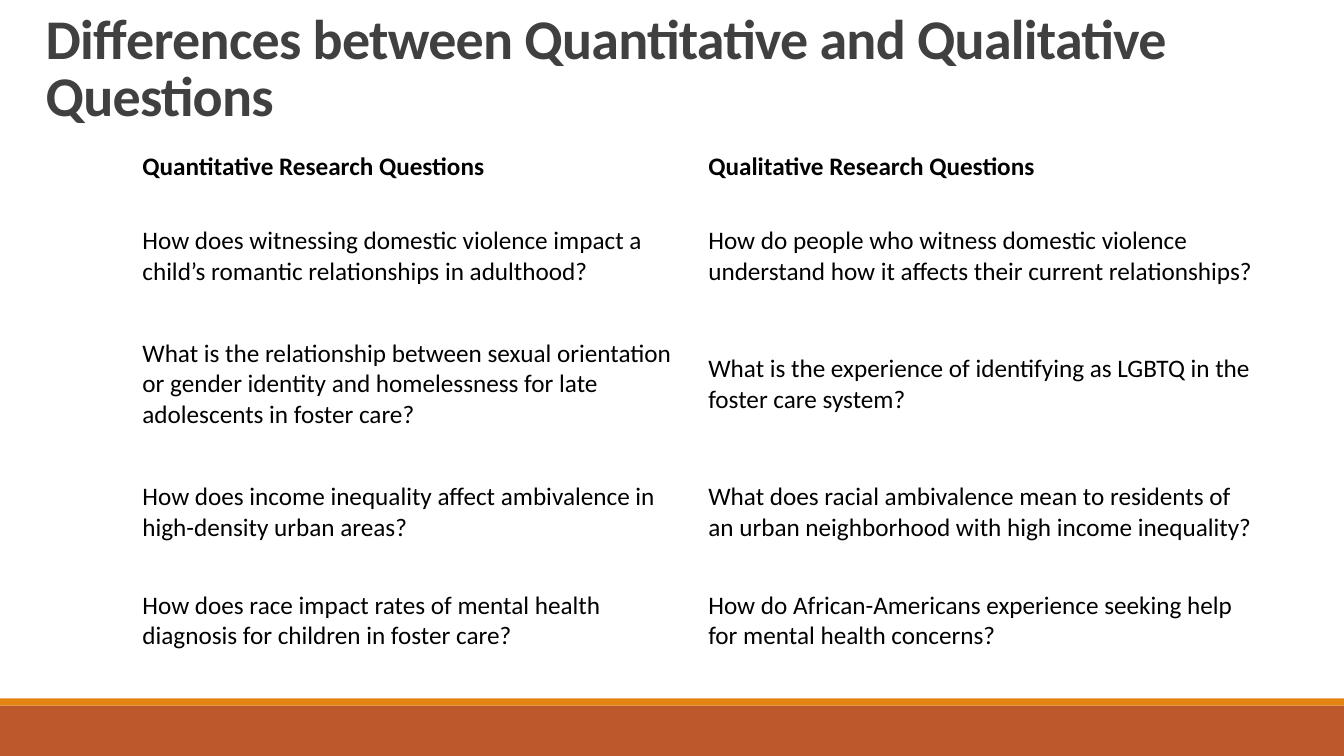
from pptx import Presentation
from pptx.dml.color import RGBColor
from pptx.enum.shapes import MSO_SHAPE
from pptx.enum.text import MSO_ANCHOR
from pptx.oxml.ns import qn
from pptx.util import Pt

PX = 9525
WIDE, HIGH = 1280, 720
WHITE = RGBColor(0xFF, 0xFF, 0xFF)
BLACK = RGBColor(0x00, 0x00, 0x00)
GREY = RGBColor(0x40, 0x40, 0x40)
RUST = RGBColor(0xBD, 0x58, 0x2C)
AMBER = RGBColor(0xE4, 0x83, 0x12)

TITLE = {"name": "Calibri", "size": Pt(40), "bold": True}
HEAD = {"name": "Calibri", "size": Pt(18), "bold": True}
BODY = {**HEAD, "bold": False}

ROWS = [
    ("Quantitative Research Questions", "Qualitative Research Questions"),
    ("How does witnessing domestic violence impact a child’s romantic relationships in adulthood?",
     "How do people who witness domestic violence understand how it affects their current relationships?"),
    ("What is the relationship between sexual orientation or gender identity and homelessness for late adolescents in foster care?",
     "What is the experience of identifying as LGBTQ in the foster care system?"),
    ("How does income inequality affect ambivalence in high-density urban areas?",
     "What does racial ambivalence mean to residents of an urban neighborhood with high income inequality?"),
    ("How does race impact rates of mental health diagnosis for children in foster care?",
     "How do African-Americans experience seeking help for mental health concerns?"),
]
TALL = [49, 122, 122, 122, 85]


def scale(*box):
    return [side * PX for side in box]


def write(frame, text, form, color):
    run = frame.paragraphs[0].add_run()
    run.text = text
    for key, value in form.items():
        setattr(run.font, key, value)
    run.font.color.rgb = color


def add_bar(slide, box, color):
    bar = slide.shapes.add_shape(MSO_SHAPE.RECTANGLE, *scale(*box))
    bar.shadow.inherit = False
    bar.fill.solid()
    bar.fill.fore_color.rgb = color
    bar.line.fill.background()


def add_footer(slide, left, top, width, height):
    strip = 7
    add_bar(slide, (left, top + strip, width, height - strip), RUST)
    add_bar(slide, (left, top, width, strip), AMBER)


def add_title(slide, *box):
    title = slide.shapes.add_textbox(*scale(*box))
    frame = title.text_frame
    frame.word_wrap = True
    frame.vertical_anchor = MSO_ANCHOR.BOTTOM
    frame.paragraphs[0].line_spacing = 0.85
    write(frame, "Differences between Quantitative and Qualitative Questions", TITLE, GREY)
    for props in title.element.iter(qn("a:rPr")):
        props.set("spc", "-50")


def add_grid(slide, left, top, width):
    box = scale(left, top, width, sum(TALL))
    grid = slide.shapes.add_table(len(ROWS), 2, *box).table
    grid.first_row = grid.horz_banding = False
    for col in grid.columns:
        col.width = width * PX // 2
    for row, tall, texts in zip(grid.rows, TALL, ROWS):
        row.height = tall * PX
        form = HEAD if texts is ROWS[0] else BODY
        for cell, text in zip(row.cells, texts):
            cell.fill.solid()
            cell.fill.fore_color.rgb = WHITE
            cell.vertical_anchor = MSO_ANCHOR.MIDDLE
            write(cell.text_frame, text, form, BLACK)


def main():
    deck = Presentation()
    deck.slide_width, deck.slide_height = scale(WIDE, HIGH)
    slide = deck.slides.add_slide(deck.slide_layouts[6])
    add_footer(slide, 0, 665, WIDE, 55)
    add_title(slide, 34, 30, 1276, 97)
    add_grid(slide, 126, 134, 1078)
    deck.save("out.pptx")


if __name__ == "__main__":
    main()
